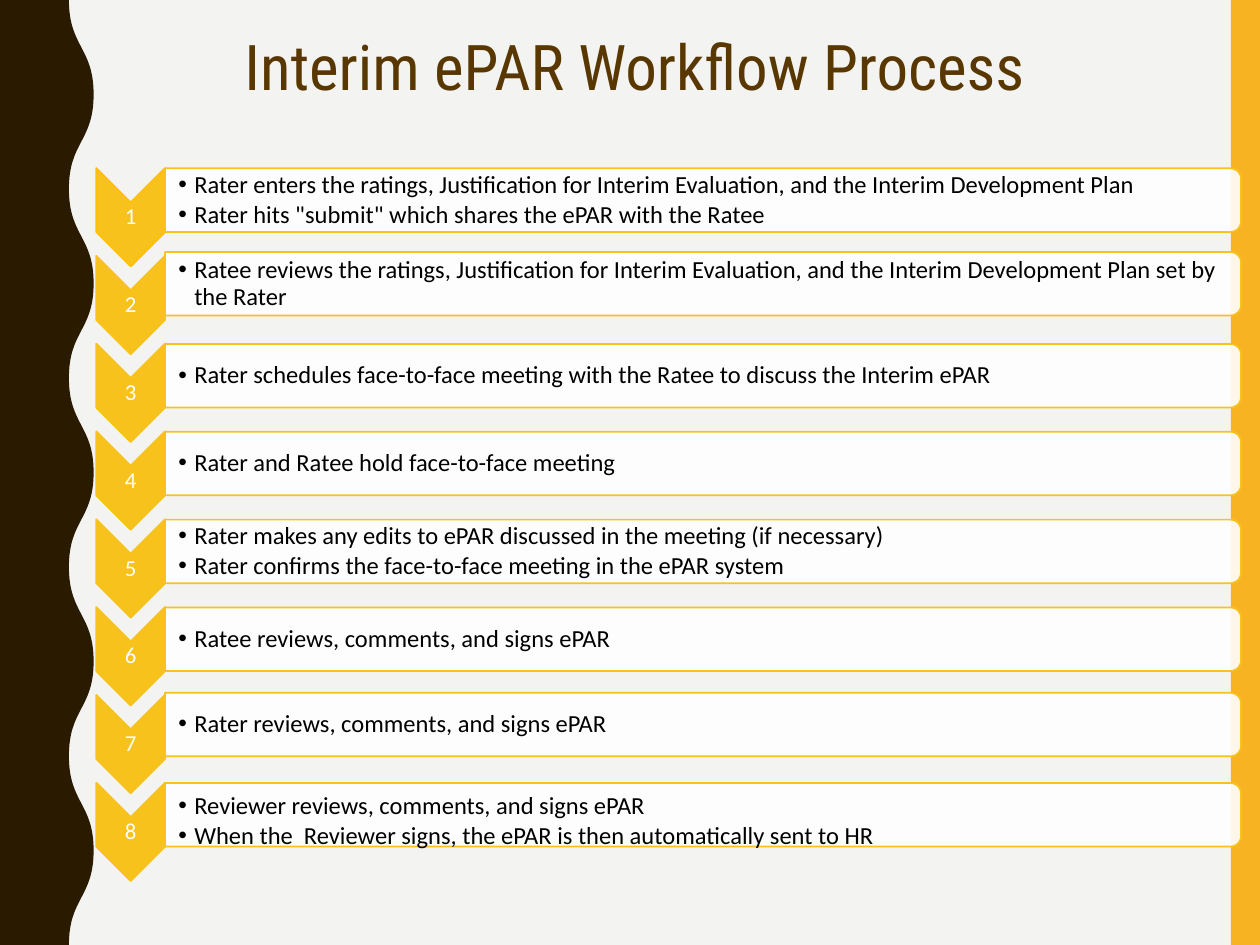
from pptx import Presentation
from pptx.dml.color import RGBColor
from pptx.enum.shapes import MSO_SHAPE as Shape
from pptx.enum.text import MSO_ANCHOR as Anchor, PP_ALIGN as Align
from pptx.oxml.ns import qn
from pptx.util import Pt
from lxml.etree import SubElement

GOLD = "F7C21C"
PITCH = 50.18
CHEVRON_TOP, CHEVRON_LENGTH, CHEVRON_WIDTH = 96, 56.2, 39.3
BAR_TOP, BAR_LENGTH, BAR_HEIGHT = 96.2, 614.9, 36.3
LEFT, BAR_LEFT = 55, 94.3

STEPS = [
    {"bullets": ["Rater enters the ratings, Justification for Interim Evaluation, and the Interim Development Plan",
                 'Rater hits "submit" which shares the ePAR with the Ratee']},
    {"bullets": ["Ratee reviews the ratings, Justification for Interim Evaluation, and the Interim Development "
                 "Plan set by the Rater"], "bar_shift": -2.4},
    {"bullets": ["Rater schedules face-to-face meeting with the Ratee to discuss the Interim ePAR"]},
    {"bullets": ["Rater and Ratee hold face-to-face meeting"]},
    {"bullets": ["Rater makes any edits to ePAR discussed in the meeting (if necessary)",
                 "Rater confirms the face-to-face meeting in the ePAR system"]},
    {"bullets": ["Ratee reviews, comments, and signs ePAR"]},
    {"bullets": ["Rater reviews, comments, and signs ePAR"], "bar_shift": -1.4},
    {"bullets": ["Reviewer reviews, comments, and signs ePAR",
                 "When the  Reviewer signs, the ePAR is then automatically sent to HR"], "text_shift": 3.8},
]


def color(value):
    return RGBColor.from_string(value)


def style(shape, fill, line=None, opacity=None):
    shape.shadow.inherit = False
    shape.fill.solid()
    shape.fill.fore_color.rgb = color(fill)
    if opacity:
        fill_color = shape._element.spPr.find(qn("a:solidFill"))[0]
        SubElement(fill_color, qn("a:alpha"), val=str(opacity * 1000))
    if line:
        shape.line.color.rgb = color(line)
        shape.line.width = Pt(1)
    else:
        shape.line.fill.background()


def add_shape(shapes, kind, left, top, width, height, rotation=0, **look):
    shape = shapes.add_shape(kind, Pt(left), Pt(top), Pt(width), Pt(height))
    shape.rotation = rotation
    style(shape, **look)


def add_turned_shape(shapes, kind, left, top, width, height, **look):
    offset = (width - height) / 2
    add_shape(shapes, kind, left + offset, top - offset, height, width, rotation=90, **look)


def add_bullet(paragraph):
    properties = paragraph._p.get_or_add_pPr()
    properties.set("marL", str(Pt(9)))
    properties.set("indent", str(-Pt(9)))
    SubElement(properties, qn("a:buFont"), typeface="Arial")
    SubElement(properties, qn("a:buChar"), char="•")


def add_text(shapes, lines, left, top, width, height, size, fill, font="Calibri", align=Align.LEFT,
             anchor=Anchor.MIDDLE, margins=(1, 1, 1, 1), spacing=0.9, after=0, bullets=False):
    frame = shapes.add_textbox(Pt(left), Pt(top), Pt(width), Pt(height)).text_frame
    frame.word_wrap = True
    frame.vertical_anchor = anchor
    frame.margin_left, frame.margin_top, frame.margin_right, frame.margin_bottom = map(Pt, margins)
    for index, line in enumerate(lines):
        paragraph = frame.paragraphs[0] if index == 0 else frame.add_paragraph()
        paragraph.alignment = align
        paragraph.line_spacing = spacing
        paragraph.space_after = Pt(after)
        if bullets:
            add_bullet(paragraph)
        run = paragraph.add_run()
        run.text = line
        run.font.size = Pt(size)
        run.font.name = font
        run.font.color.rgb = color(fill)


def add_wave(shapes, inner=39.4, outer=53.5, half_wave=54, halves=10):
    crests = [(Pt(outer if index % 2 else inner), Pt(half_wave * index)) for index in range(halves + 1)]
    builder = shapes.build_freeform(*crests[0])
    builder.add_line_segments([*crests[1:], (Pt(0), crests[-1][1]), (Pt(0), Pt(0))], close=True)
    shape = builder.convert_to_shape()
    segments = list(shape._element.iter(qn("a:lnTo")))
    for segment, start, end in zip(segments, crests, crests[1:]):
        middle = (start[1] + end[1]) // 2
        curve = segment.makeelement(qn("a:cubicBezTo"))
        for x, y in ((start[0], middle), (end[0], middle), end):
            SubElement(curve, qn("a:pt"), x=str(x), y=str(y))
        segment.getparent().replace(segment, curve)
    style(shape, "2A1A00")


def add_step(shapes, index, bullets, bar_shift=0, text_shift=0):
    chevron_top = CHEVRON_TOP + PITCH * index
    bar_top = BAR_TOP + PITCH * index + bar_shift
    add_turned_shape(shapes, Shape.CHEVRON, LEFT, chevron_top, CHEVRON_WIDTH, CHEVRON_LENGTH,
                     fill=GOLD, line="FFC000" if index == 0 else GOLD)
    add_text(shapes, [str(index + 1)], LEFT, chevron_top + 19.8, CHEVRON_WIDTH, 16.8,
             13, "FFFFFF", align=Align.CENTER)
    add_turned_shape(shapes, Shape.ROUND_2_SAME_RECTANGLE, BAR_LEFT, bar_top, BAR_LENGTH, BAR_HEIGHT,
                     fill="FFFFFF", line=GOLD, opacity=90)
    add_text(shapes, bullets, BAR_LEFT, bar_top + 1.8 + text_shift, BAR_LENGTH - 1.7, BAR_HEIGHT - 3.4,
             14, "000000", margins=(7.7, 1, 1, 1), after=2.1, bullets=True)


def main():
    presentation = Presentation()
    presentation.slide_width, presentation.slide_height = Pt(720), Pt(540)
    slide = presentation.slides.add_slide(presentation.slide_layouts[6])
    slide.background.fill.solid()
    slide.background.fill.fore_color.rgb = color("F3F3F2")
    add_shape(slide.shapes, Shape.RECTANGLE, 703.4, 0, 16.6, 540, fill="F8B323")
    add_wave(slide.shapes)
    workflow = slide.shapes.add_group_shape()
    for index, step in enumerate(STEPS):
        add_step(workflow.shapes, index, **step)
    add_text(slide.shapes, ["Interim ePAR Workflow Process"], 47.7, 12.2, 630, 51.1, 36, "593700",
             font="Roboto Condensed", align=Align.CENTER, anchor=Anchor.TOP,
             margins=(7.2, 3.6, 7.2, 3.6), spacing=1.0)
    presentation.save("out.pptx")


if __name__ == "__main__":
    main()
